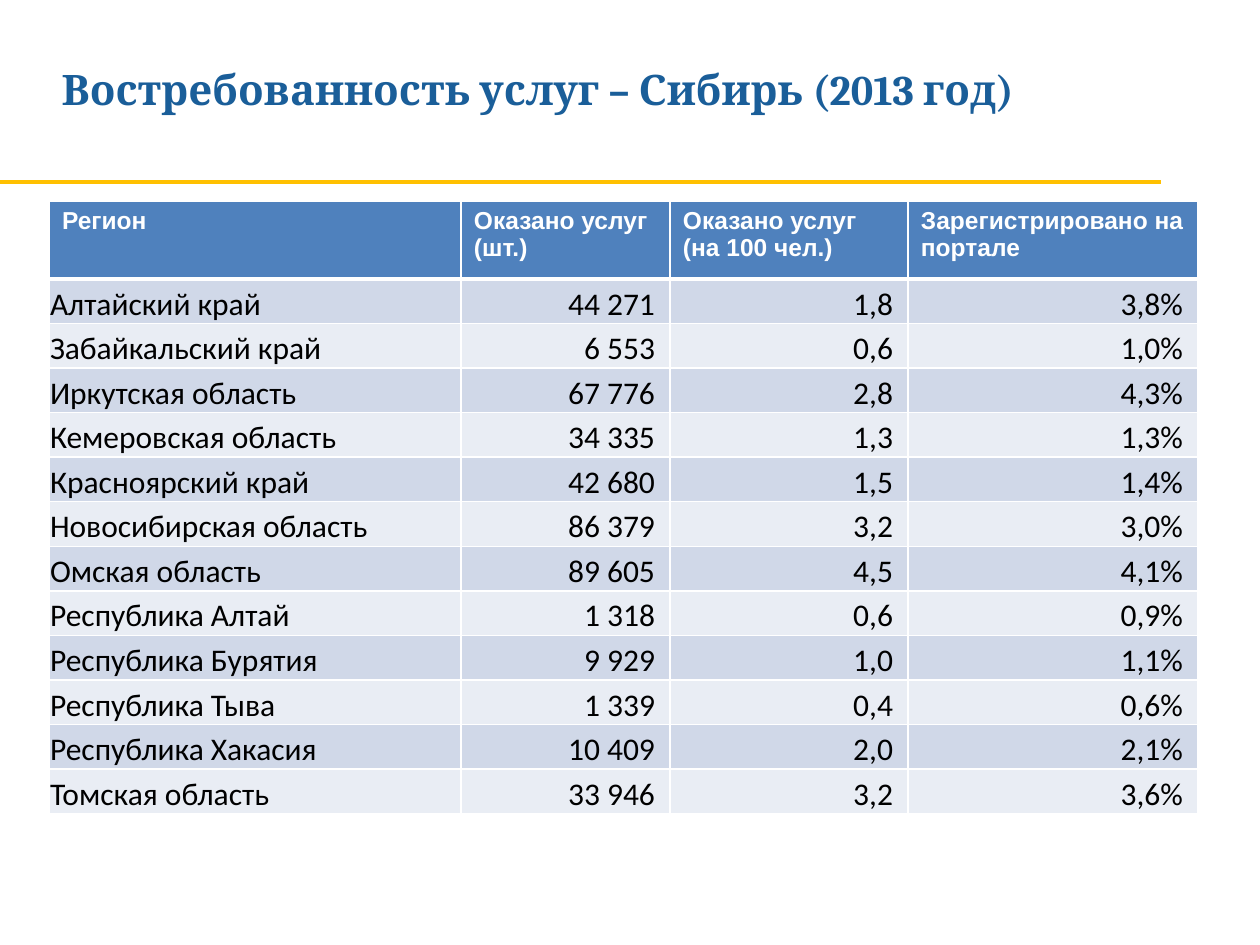
from dataclasses import dataclass

from lxml import etree
from pptx import Presentation
from pptx.dml.color import RGBColor
from pptx.enum.shapes import MSO_CONNECTOR
from pptx.enum.text import MSO_ANCHOR, PP_ALIGN
from pptx.oxml.ns import qn
from pptx.util import Emu, Pt

LEFT, RIGHT = PP_ALIGN.LEFT, PP_ALIGN.RIGHT
TOP, BOTTOM = MSO_ANCHOR.TOP, MSO_ANCHOR.BOTTOM
STRAIGHT = MSO_CONNECTOR.STRAIGHT

# Content
TITLE = "Востребованность услуг – Сибирь (2013 год)"
HEADERS = ["Регион", "Оказано услуг (шт.)", "Оказано услуг (на 100 чел.)",
           "Зарегистрировано на портале"]
REGIONS = [
    ("Алтайский край", "44 271", "1,8", "3,8%"),
    ("Забайкальский край", "6 553", "0,6", "1,0%"),
    ("Иркутская область", "67 776", "2,8", "4,3%"),
    ("Кемеровская область", "34 335", "1,3", "1,3%"),
    ("Красноярский край", "42 680", "1,5", "1,4%"),
    ("Новосибирская область", "86 379", "3,2", "3,0%"),
    ("Омская область", "89 605", "4,5", "4,1%"),
    ("Республика Алтай", "1 318", "0,6", "0,9%"),
    ("Республика Бурятия", "9 929", "1,0", "1,1%"),
    ("Республика Тыва", "1 339", "0,4", "0,6%"),
    ("Республика Хакасия", "10 409", "2,0", "2,1%"),
    ("Томская область", "33 946", "3,2", "3,6%"),
]

# Layout in px
SLIDE_SIZE = (1260, 945)
TITLE_BOX = (49, 57, 1111, 63)
RULE_Y, RULE_END = 182, 1161
TABLE_LEFT, TABLE_TOP = 49, 201
COLUMN_WIDTHS = [412, 209, 238, 290]
HEADER_HEIGHT, BODY_HEIGHT = 78, 535
# Cell margins: left, top, right, bottom
HEADER_MARGINS = (13, 6, 13, 6)
NAME_MARGINS = (1, 1, 1, 0)
VALUE_MARGINS = (0, 0, 15, 0)


@dataclass(frozen=True)
class Theme:
    title_font: str = "Cambria"
    header_font: str = "Arial"
    body_font: str = "Calibri"
    title_size: int = 24
    header_size: int = 14
    body_size: int = 18
    title: str = "1A5E99"
    rule: str = "FFC000"
    header_fill: str = "4F81BD"
    bands: tuple = ("D0D8E8", "E9EDF4")
    white: str = "FFFFFF"
    text: str = "000000"


THEME = Theme()


def px(value):
    return Emu(round(value * 9144000 / SLIDE_SIZE[0]))


def set_font(paragraph, name, size, color, bold):
    font = paragraph.font
    font.name, font.size, font.bold = name, Pt(size), bold
    font.color.rgb = RGBColor.from_string(color)


def set_borders(cell, bottom=1, top=1):
    properties = cell._tc.get_or_add_tcPr()
    widths = {"a:lnL": 1, "a:lnR": 1, "a:lnT": top, "a:lnB": bottom}
    for index, (tag, width) in enumerate(widths.items()):
        line = etree.Element(qn(tag), w=str(Pt(width)))
        fill = etree.SubElement(line, qn("a:solidFill"))
        etree.SubElement(fill, qn("a:srgbClr"), val=THEME.white)
        properties.insert(index, line)


def fill_cell(cell, text, fill, margins, anchor, alignment, font):
    cell.text = text
    cell.fill.solid()
    cell.fill.fore_color.rgb = RGBColor.from_string(fill)
    (cell.margin_left, cell.margin_top,
     cell.margin_right, cell.margin_bottom) = map(px, margins)
    cell.vertical_anchor = anchor
    paragraph = cell.text_frame.paragraphs[0]
    paragraph.alignment = alignment
    set_font(paragraph, *font)


def add_title(slide):
    title = slide.shapes.title
    title.left, title.top, title.width, title.height = map(px, TITLE_BOX)
    frame = title.text_frame
    frame.text = TITLE
    frame.word_wrap = True
    frame.vertical_anchor = TOP
    paragraph = frame.paragraphs[0]
    paragraph.alignment = LEFT
    set_font(paragraph, THEME.title_font, THEME.title_size, THEME.title, True)


def add_rule(slide):
    rule = slide.shapes.add_connector(
        STRAIGHT, 0, px(RULE_Y), px(RULE_END), px(RULE_Y))
    rule.line.color.rgb = RGBColor.from_string(THEME.rule)
    rule.line.width = Pt(2.5)
    etree.SubElement(rule._element.spPr, qn("a:effectLst"))


def add_region_table(slide):
    table = slide.shapes.add_table(
        len(REGIONS) + 1, len(HEADERS), px(TABLE_LEFT), px(TABLE_TOP),
        px(sum(COLUMN_WIDTHS)), px(HEADER_HEIGHT + BODY_HEIGHT)).table
    for column, width in zip(table.columns, COLUMN_WIDTHS):
        column.width = px(width)
    for index, row in enumerate(table.rows):
        row.height = px(BODY_HEIGHT / len(REGIONS) if index else HEADER_HEIGHT)

    # Header row
    header_font = (THEME.header_font, THEME.header_size, THEME.white, True)
    for column, text in enumerate(HEADERS):
        cell = table.cell(0, column)
        fill_cell(cell, text, THEME.header_fill, HEADER_MARGINS, TOP, LEFT,
                  header_font)
        set_borders(cell, bottom=3)

    # Banded body: names on the left, values on the right
    body_font = (THEME.body_font, THEME.body_size, THEME.text, False)
    for row, values in enumerate(REGIONS, start=1):
        band = THEME.bands[(row - 1) % 2]
        for column, text in enumerate(values):
            cell = table.cell(row, column)
            margins, alignment = ((VALUE_MARGINS, RIGHT) if column
                                  else (NAME_MARGINS, LEFT))
            fill_cell(cell, text, band, margins, BOTTOM, alignment, body_font)
            set_borders(cell, top=3 if row == 1 else 1)


def main():
    presentation = Presentation()
    presentation.slide_width, presentation.slide_height = map(px, SLIDE_SIZE)
    slide = presentation.slides.add_slide(presentation.slide_layouts[5])
    add_title(slide)
    add_rule(slide)
    add_region_table(slide)
    presentation.save("out.pptx")


if __name__ == "__main__":
    main()
